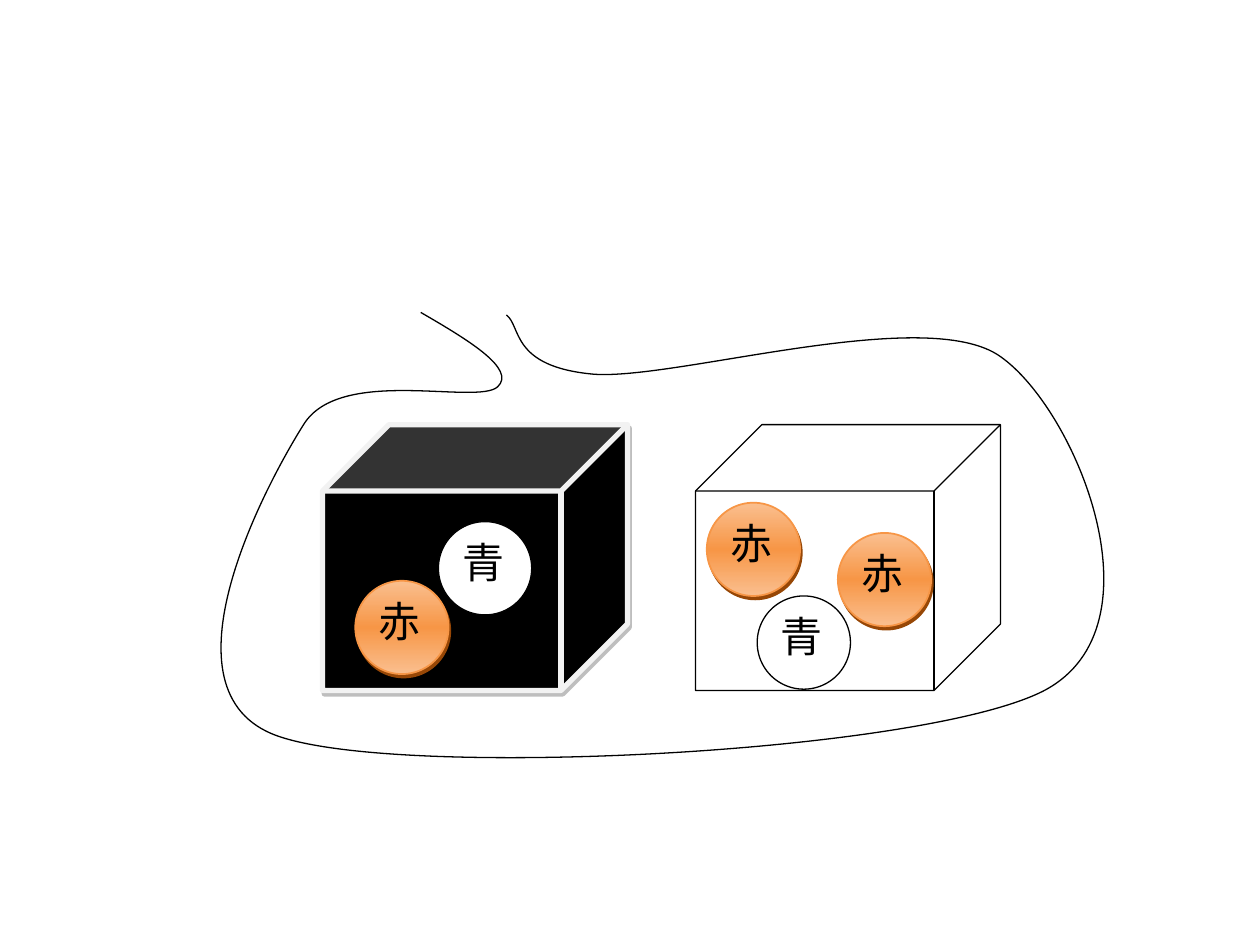
from lxml import etree
from pptx import Presentation
from pptx.dml.color import RGBColor
from pptx.enum import shapes, text
from pptx.oxml.ns import qn
from pptx.util import Inches, Pt

FONT = "TeX Gyre Schola"
BALL_SIZE = 0.74
CUBE_SIZE = (2.42, 2.11)
RED, BLUE = "赤", "青"

# Bag outline: start point, then (control, control, end) for each curve
BAG_START = (3.34, 2.48)
BAG_CURVES = [
    ((3.72, 2.7), (4.1, 2.93), (3.95, 3.07)),
    ((3.79, 3.22), (2.7, 2.9), (2.41, 3.37)),
    ((2.12, 3.83), (1.22, 5.49), (2.2, 5.84)),
    ((3.18, 6.19), (7.33, 5.98), (8.29, 5.48)),
    ((9.25, 4.97), (8.54, 3.25), (7.94, 2.83)),
    ((7.35, 2.41), (5.36, 3.02), (4.71, 2.97)),
    ((4.05, 2.91), (4.14, 2.59), (4.02, 2.5)),
]


def color(value):
    return RGBColor.from_string(value)


def add_color(parent, value):
    return etree.SubElement(parent, qn("a:srgbClr"), val=value)


def style(shape, fill, line, width):
    shape.shadow.inherit = False
    if fill:
        shape.fill.solid()
        shape.fill.fore_color.rgb = color(fill)
    else:
        shape.fill.background()
    shape.line.color.rgb = color(line)
    shape.line.width = Pt(width)


def add_shadow(shape, value, opacity):
    effects = shape._element.spPr.find(qn("a:effectLst"))
    shadow = etree.SubElement(
        effects, qn("a:outerShdw"), blurRad="0", dist=str(Pt(2.2)),
        dir=str(63 * 60000), algn="ctr", rotWithShape="0")
    etree.SubElement(add_color(shadow, value), qn("a:alpha"),
                     val=str(opacity * 1000))


def add_glow_fill(shape, edge, middle):
    """Vertical gradient from edge to middle and back."""
    shape.fill.gradient()
    shape.fill.gradient_angle = 270
    stops = shape._element.spPr.find(qn("a:gradFill")).find(qn("a:gsLst"))
    for stop in list(stops):
        stops.remove(stop)
    for percent, value in ((0, edge), (50, middle), (100, edge)):
        stop = etree.SubElement(stops, qn("a:gs"), pos=str(percent * 1000))
        add_color(stop, value)


def add_ball(slide, left, top, label):
    ball = slide.shapes.add_shape(
        shapes.MSO_SHAPE.OVAL, Inches(left), Inches(top),
        Inches(BALL_SIZE), Inches(BALL_SIZE))
    if label == RED:
        style(ball, "F79646", "F79646", 1)
        add_glow_fill(ball, "FABF8F", "F79646")
        add_shadow(ball, "974706", 100)
    else:
        style(ball, "FFFFFF", "000000", 0.75)

    frame = ball.text_frame
    frame.margin_left = frame.margin_right = Inches(0.08)
    frame.margin_top = frame.margin_bottom = Inches(0.01)
    frame.vertical_anchor = text.MSO_ANCHOR.TOP
    frame.text = label
    paragraph = frame.paragraphs[0]
    paragraph.alignment = text.PP_ALIGN.LEFT
    font = paragraph.runs[0].font
    font.name, font.size = FONT, Pt(24)
    font.color.rgb = color("000000")


def add_box(slide, left, top, dark, balls):
    """A cube with its balls, placed relative to the cube's corner."""
    width, height = CUBE_SIZE
    cube = slide.shapes.add_shape(
        shapes.MSO_SHAPE.CUBE, Inches(left), Inches(top),
        Inches(width), Inches(height))
    cube.adjustments[0] = 0.25
    if dark:
        style(cube, "000000", "F2F2F2", 3)
        add_shadow(cube, "7F7F7F", 50)
    else:
        style(cube, None, "000000", 0.75)
    for dx, dy, label in balls:
        add_ball(slide, left + dx, top + dy, label)


def add_bag(slide):
    """The open bag, drawn as a chain of Bezier curves."""
    builder = slide.shapes.build_freeform(
        Inches(BAG_START[0]), Inches(BAG_START[1]))
    builder.add_line_segments(
        [(Inches(x), Inches(y)) for curve in BAG_CURVES for x, y in curve],
        close=False)
    bag = builder.convert_to_shape()
    style(bag, None, "000000", 0.75)

    # Turn every three line points into one cubic curve
    outline = next(bag._element.iter(qn("a:moveTo"))).getparent()
    lines = outline.findall(qn("a:lnTo"))
    for first in range(0, len(lines), 3):
        curve = etree.SubElement(outline, qn("a:cubicBezTo"))
        for line in lines[first:first + 3]:
            curve.append(line[0])
            outline.remove(line)


def main():
    deck = Presentation()
    deck.slide_width, deck.slide_height = Inches(10), Inches(7.5)
    slide = deck.slides.add_slide(deck.slide_layouts[6])
    add_box(slide, 2.56, 3.37, True,
            [(0.26, 1.24, RED), (0.92, 0.77, BLUE)])
    add_box(slide, 5.52, 3.37, False,
            [(0.09, 0.62, RED), (1.13, 0.86, RED), (0.49, 1.36, BLUE)])
    add_bag(slide)
    deck.save("out.pptx")


if __name__ == "__main__":
    main()
